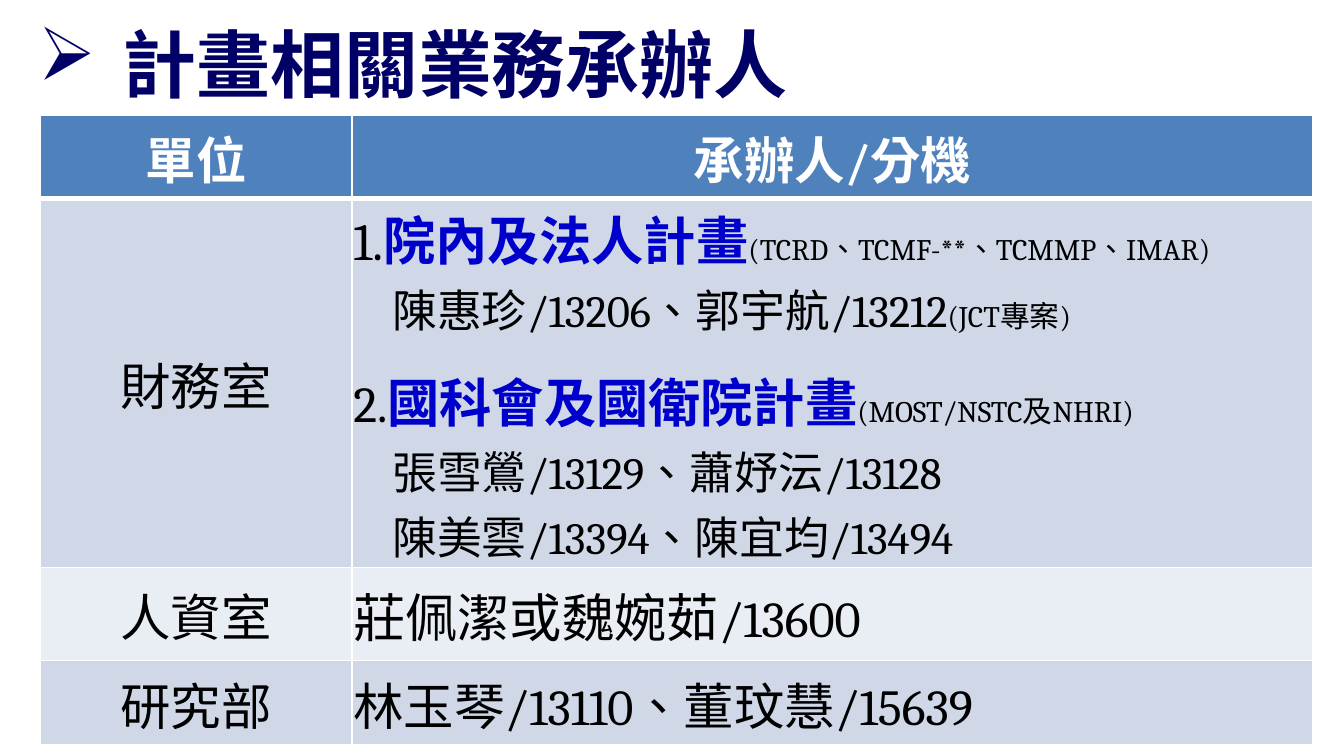
from dataclasses import dataclass
from lxml.etree import SubElement
from pptx import Presentation
from pptx.dml.color import RGBColor
from pptx.enum.lang import MSO_LANGUAGE_ID
from pptx.enum.text import MSO_ANCHOR, MSO_AUTO_SIZE, PP_ALIGN
from pptx.oxml.ns import qn
from pptx.util import Inches, Pt


@dataclass(frozen=True)
class Theme:
    serif: str = "Cambria"
    sans: str = "Noto Sans CJK SC"
    navy: str = "000066"
    blue: str = "0000CC"
    black: str = "000000"
    white: str = "FFFFFF"
    head: str = "4F81BD"
    dark: str = "D0D8E8"
    light: str = "E9EDF4"
    title: float = 39.6
    large: float = 28
    unit: float = 27
    name: float = 24
    note: float = 16


@dataclass
class Line:
    runs: list
    indent: float = 0
    before: float = 0
    align: PP_ALIGN = PP_ALIGN.LEFT


class Deck:
    def __init__(self, theme):
        self.theme = theme
        self.file = Presentation()
        self.file.slide_width = Inches(10)
        self.file.slide_height = Inches(10 * 9 / 16)
        self.slide = self.file.slides.add_slide(self.file.slide_layouts[5])

    def run(self, para, text, size, color=None, bold=False, face=None):
        run = para.add_run()
        run.text = text
        font = run.font
        font.size = Pt(size)
        font.bold = bold
        font.name = face or self.theme.serif
        font.language_id = MSO_LANGUAGE_ID.TRADITIONAL_CHINESE
        font.color.rgb = RGBColor.from_string(color or self.theme.black)
        SubElement(font._element, qn("a:ea"), typeface=self.theme.sans)

    def title(self, text, left, top, width, height):
        shape = self.slide.shapes.title
        shape.left, shape.top = Inches(left), Inches(top)
        shape.width, shape.height = Inches(width), Inches(height)
        frame = shape.text_frame
        frame.auto_size = MSO_AUTO_SIZE.NONE
        frame.word_wrap = True
        frame.vertical_anchor = MSO_ANCHOR.MIDDLE
        para = frame.paragraphs[0]
        para.alignment = PP_ALIGN.LEFT
        props = para._p.get_or_add_pPr()
        props.set("marL", str(Inches(0.62)))
        props.set("indent", str(-Inches(0.62)))
        SubElement(props, qn("a:buFont"), typeface="Wingdings", charset="2")
        SubElement(props, qn("a:buChar"), char="Ø")
        theme = self.theme
        self.run(para, text, theme.title, theme.navy, True, theme.sans)

    def edge(self, cell, side, width):
        props = cell._tc.get_or_add_tcPr()
        line = SubElement(props, qn(f"a:ln{side}"), w=str(Pt(width)))
        fill = SubElement(line, qn("a:solidFill"))
        SubElement(fill, qn("a:srgbClr"), val=self.theme.white)

    def cell(self, cell, lines, fill, top, base):
        cell.margin_left = cell.margin_right = cell.margin_top = Inches(0.01)
        cell.margin_bottom = 0
        cell.vertical_anchor = MSO_ANCHOR.MIDDLE
        for side, width in zip("LRTB", (1, 1, top, base)):
            self.edge(cell, side, width)
        cell.fill.solid()
        cell.fill.fore_color.rgb = RGBColor.from_string(fill)
        frame = cell.text_frame
        for index, line in enumerate(lines):
            para = frame.add_paragraph() if index else frame.paragraphs[0]
            para.alignment = line.align
            para.space_before = Pt(line.before)
            if line.indent:
                props = para._p.get_or_add_pPr()
                props.set("indent", str(Inches(line.indent)))
            for run in line.runs:
                self.run(para, *run)

    def table(self, rows, left, top, widths, heights):
        theme = self.theme
        frame = self.slide.shapes.add_table(
            len(rows), len(widths), Inches(left), Inches(top),
            Inches(sum(widths)), Inches(sum(heights)))
        table = frame.table
        for col, width in zip(table.columns, widths):
            col.width = Inches(width)
        for row, height in zip(table.rows, heights):
            row.height = Inches(height)
        for index, row in enumerate(rows):
            band = theme.dark if index % 2 else theme.light
            fill = band if index else theme.head
            top_edge = 3 if index == 1 else 1
            base_edge = 1 if index else 3
            for cell, lines in zip(table.rows[index].cells, row):
                self.cell(cell, lines, fill, top_edge, base_edge)

    def save(self):
        self.file.save("out.pptx")


def main():
    theme = Theme()
    deck = Deck(theme)

    def head(text):
        run = (text, theme.unit, theme.white, True)
        return [Line([run], align=PP_ALIGN.CENTER)]

    def unit(text):
        return [Line([(text, theme.unit)], align=PP_ALIGN.CENTER)]

    def topic(mark, size, text, note, before=0):
        return Line([(mark, size), (text, theme.large, theme.blue, True),
                     (note, theme.note)], before=before)

    def staff(text, note=""):
        runs = [(text, theme.name)]
        if note:
            runs.append((note, theme.note))
        return Line(runs, indent=0.29)

    finance = [
        topic("1.", theme.large, "院內及法人計畫", "(TCRD、TCMF-**、TCMMP、IMAR)"),
        staff("陳惠珍/13206、郭宇航/13212", "(JCT專案)"),
        topic("2.", theme.unit, "國科會及國衛院計畫", "(MOST/NSTC及NHRI)", 11.5),
        staff("張雪鶯/13129、蕭妤沄/13128"),
        staff("陳美雲/13394、陳宜均/13494"),
    ]
    rows = [
        (head("單位"), head("承辦人/分機")),
        (unit("財務室"), finance),
        (unit("人資室"), [Line([("莊佩潔或魏婉茹", theme.large),
                             ("/13600", theme.unit)])]),
        (unit("研究部"), [Line([("林玉琴/13110、董玟慧/15639", theme.unit)])]),
    ]
    deck.title("計畫相關業務承辦人", 0.19, 0.1, 9, 0.73)
    deck.table(rows, 0.3, 0.86, (2.32, 7.15), (0.62, 2.59, 0.69, 0.63))
    deck.save()


if __name__ == "__main__":
    main()
